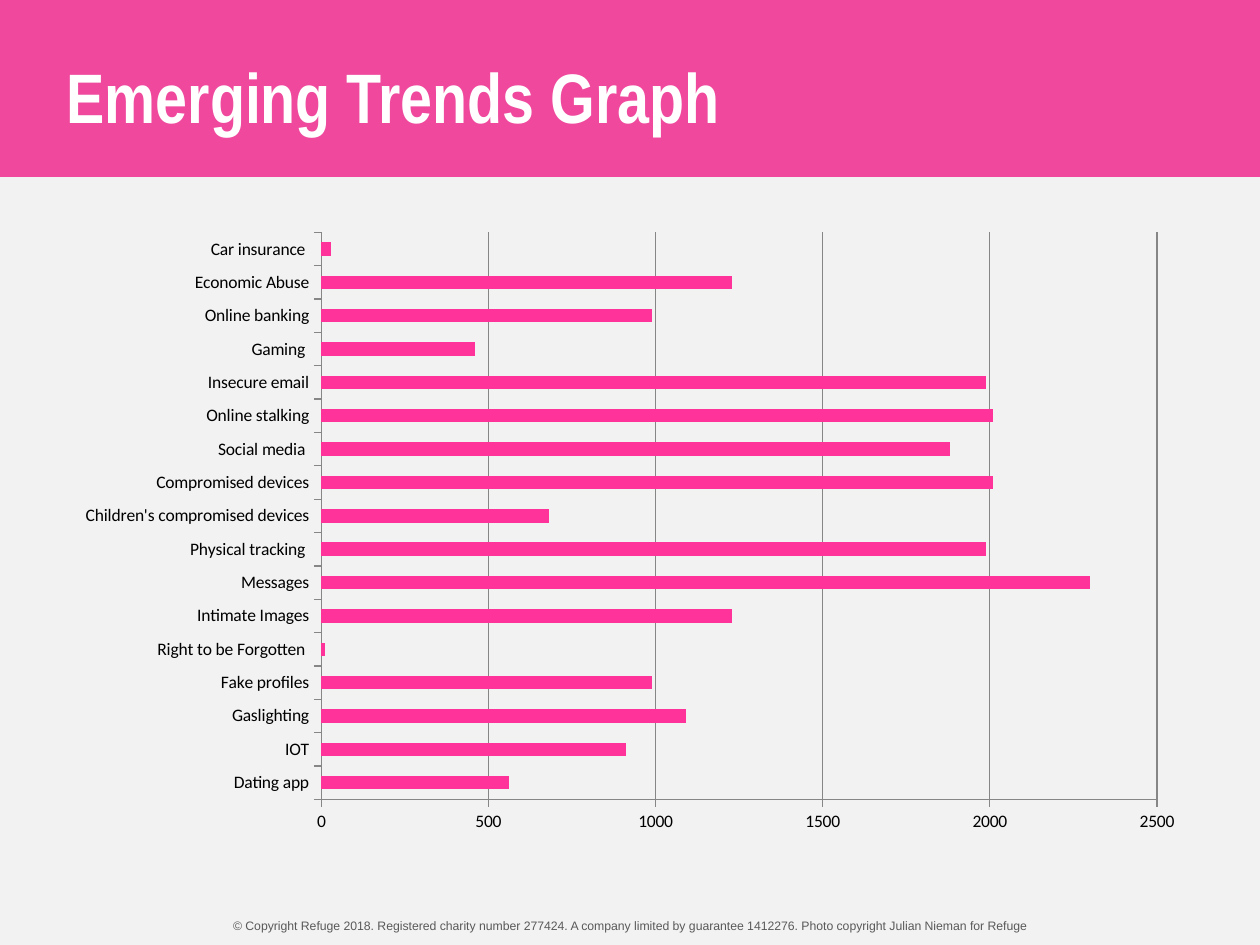
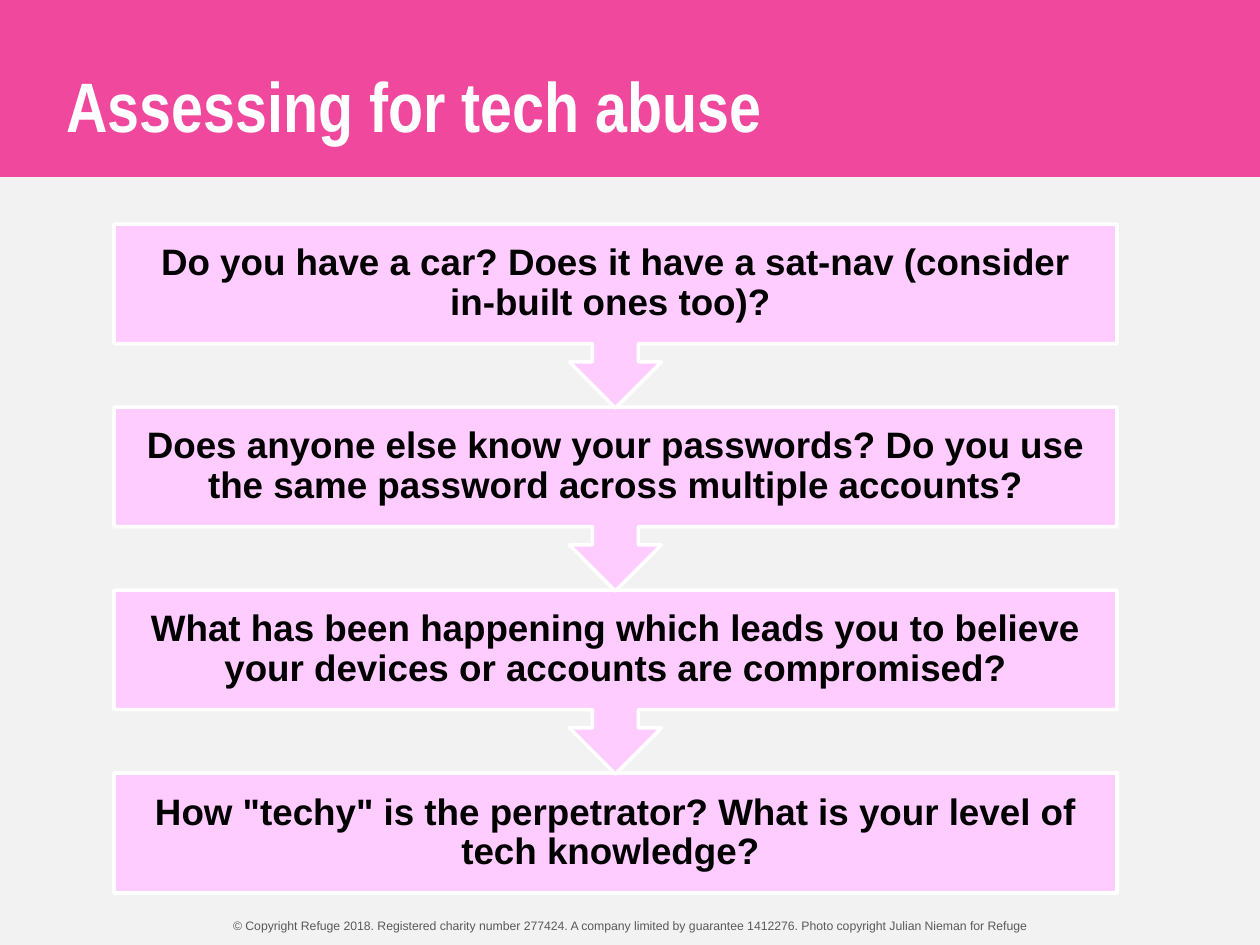
"""Build two slides on tech abuse: a trends chart and a chain of assessment questions."""
from pptx import Presentation
from pptx.chart.data import CategoryChartData
from pptx.dml.color import RGBColor
from pptx.enum.chart import XL_CHART_TYPE, XL_TICK_MARK
from pptx.enum.shapes import MSO_SHAPE
from pptx.enum.text import MSO_ANCHOR, MSO_AUTO_SIZE, PP_ALIGN
from pptx.util import Emu, Pt

BAND_PINK = "EF489D"
BAR_PINK = "FF3399"
PALE_PINK = "FFCCFF"
BACKGROUND = "F2F2F2"
FOOTER_GREY = "595959"
AXIS_GREY = "868686"
WHITE = "FFFFFF"
BLACK = "000000"
SLIDE_WIDTH, SLIDE_HEIGHT = 1260, 945
FOOTER = (
    "© Copyright Refuge 2018. Registered charity number 277424. "
    "A company limited by guarantee 1412276. "
    "Photo copyright Julian Nieman for Refuge"
)
TITLES = [("Emerging Trends Graph", 16), ("Assessing for tech abuse", 26)]
TRENDS = {
    "Dating app": 560,
    "IOT": 910,
    "Gaslighting": 1090,
    "Fake profiles": 990,
    "Right to be Forgotten ": 10,
    "Intimate Images": 1230,
    "Messages": 2300,
    "Physical tracking ": 1990,
    "Children's compromised devices": 680,
    "Compromised devices": 2010,
    "Social media ": 1880,
    "Online stalking": 2010,
    "Insecure email": 1990,
    "Gaming ": 460,
    "Online banking": 990,
    "Economic Abuse": 1230,
    "Car insurance ": 30,
}
QUESTIONS = [
    "Do you have a car? Does it have a sat-nav (consider in-built ones too)? ",
    "Does anyone else know your passwords? Do you use the same password across multiple accounts?",
    "What has been happening which leads you to believe your devices or accounts are compromised?",
    'How "techy" is the perpetrator? What is your level of tech knowledge? ',
]


def box(*lengths):
    """Turn px lengths into EMU."""
    return [Emu(round(length * 9144000 / SLIDE_WIDTH)) for length in lengths]


def write(shape, text, font, size, color, bold, align, **frame_format):
    """Put one formatted paragraph into a shape."""
    frame = shape.text_frame
    frame.text = text
    frame_format = {"word_wrap": True, "auto_size": MSO_AUTO_SIZE.NONE, **frame_format}
    for name, value in frame_format.items():
        setattr(frame, name, value)
    paragraph = frame.paragraphs[0]
    paragraph.alignment = align
    for name, value in {"name": font, "size": Pt(size), "bold": bold}.items():
        setattr(paragraph.font, name, value)
    paragraph.font.color.rgb = RGBColor.from_string(color)
    return paragraph


presentation = Presentation()
presentation.slide_width, presentation.slide_height = box(SLIDE_WIDTH, SLIDE_HEIGHT)
master = presentation.slide_master
master.background.fill.solid()
master.background.fill.fore_color.rgb = RGBColor.from_string(BACKGROUND)

slides = []
for title_text, title_top in TITLES:
    slide = presentation.slides.add_slide(presentation.slide_layouts[5])
    title = slide.shapes.title
    title.left, title.top, title.width, title.height = box(54, title_top, 932, 158)
    write(title, title_text, "Arial Narrow", 40, WHITE, True, PP_ALIGN.LEFT,
          vertical_anchor=MSO_ANCHOR.MIDDLE)
    slides.append(slide)
chart_slide, question_slide = slides

band = chart_slide.shapes.add_shape(MSO_SHAPE.RECTANGLE, *box(0, 0, SLIDE_WIDTH, 175))
band.shadow.inherit = False
band.fill.solid()
band.fill.fore_color.rgb = RGBColor.from_string(BAND_PINK)
band.line.color.rgb = RGBColor.from_string(BAND_PINK)
band.line.width = Pt(2)
footer = chart_slide.shapes.add_textbox(*box(0, 912, SLIDE_WIDTH, 28))
write(footer, FOOTER, "Arial", 7, FOOTER_GREY, False, PP_ALIGN.CENTER)
for position, shape in enumerate([band, footer]):
    shape.element.xpath(".//p:cNvPr")[0].set("id", str(20 + position))
    master.shapes.element.insert(2 + position, shape.element)

chart_data = CategoryChartData()
chart_data.categories = list(TRENDS)
chart_data.add_series("Series 1", list(TRENDS.values()))
chart = chart_slide.shapes.add_chart(
    XL_CHART_TYPE.BAR_CLUSTERED, *box(63, 220, 1134, 624), chart_data).chart
chart.has_legend = False
chart.has_title = False
chart.font.name = "Calibri"
chart.font.size = Pt(10)
chart.font.color.rgb = RGBColor.from_string(BLACK)
plot = chart.plots[0]
plot.vary_by_categories = False
plot.gap_width = 150
bars = plot.series[0].format.fill
bars.solid()
bars.fore_color.rgb = RGBColor.from_string(BAR_PINK)
value_axis = chart.value_axis
scale = {"minimum_scale": 0, "maximum_scale": 2500, "major_unit": 500,
         "has_major_gridlines": True}
for name, value in scale.items():
    setattr(value_axis, name, value)
for axis in (chart.category_axis, value_axis):
    axis.major_tick_mark = XL_TICK_MARK.OUTSIDE
for lines in (chart.category_axis, value_axis, value_axis.major_gridlines):
    lines.format.line.color.rgb = RGBColor.from_string(AXIS_GREY)
    lines.format.line.width = Pt(0.75)

last = len(QUESTIONS) - 1
margin = box(20)[0]
margins = {f"margin_{side}": margin for side in ("left", "top", "right", "bottom")}
for row in range(last, -1, -1):
    kind, height = ((MSO_SHAPE.RECTANGLE, 120) if row == last
                    else (MSO_SHAPE.DOWN_ARROW_CALLOUT, 184))
    step = question_slide.shapes.add_shape(kind, *box(114, 224 + 183 * row, 1003, height))
    step.shadow.inherit = False
    step.fill.solid()
    step.fill.fore_color.rgb = RGBColor.from_string(PALE_PINK)
    step.line.color.rgb = RGBColor.from_string(WHITE)
    step.line.width = Pt(2)
    paragraph = write(step, QUESTIONS[row], "Arial", 21, BLACK, True, PP_ALIGN.CENTER,
                      vertical_anchor=MSO_ANCHOR.MIDDLE, **margins)
    paragraph.line_spacing = 0.9

presentation.save("out.pptx")
